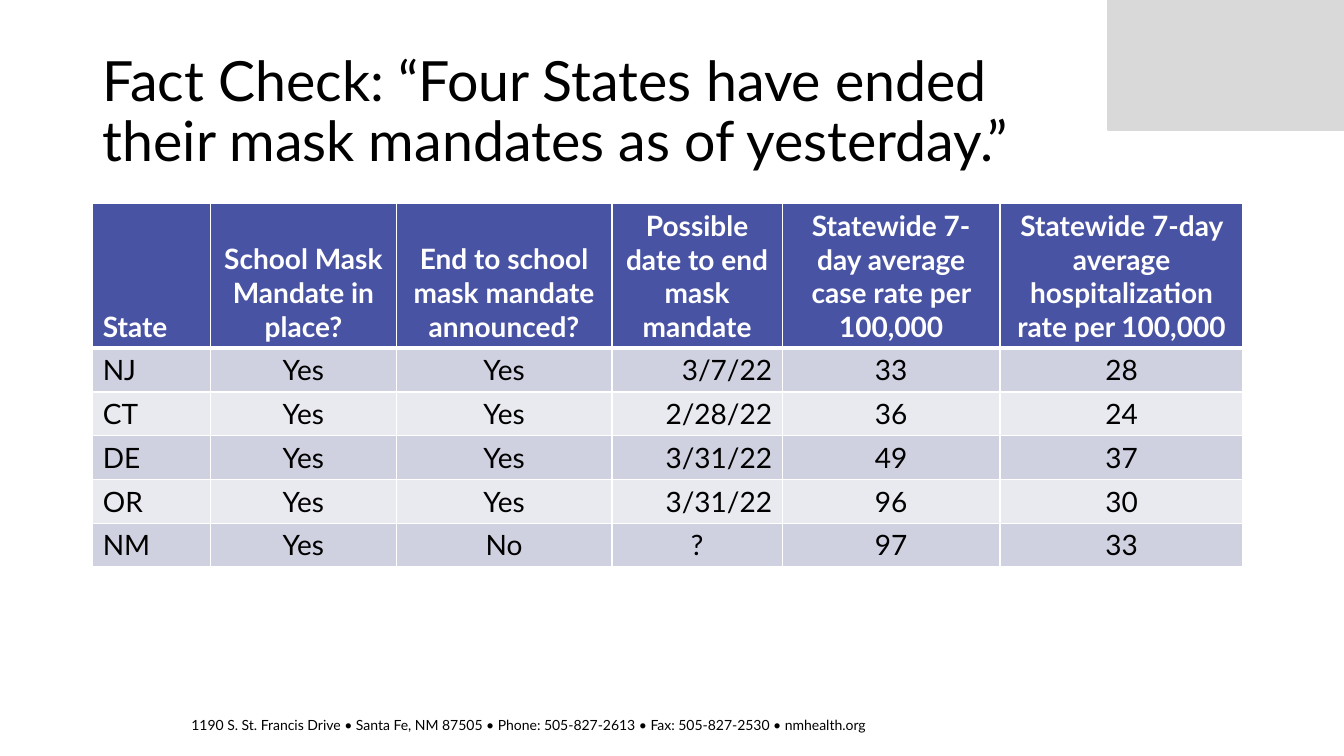
import dataclasses

import lxml.etree
import pptx
import pptx.dml.color
import pptx.enum.shapes
import pptx.enum.text
import pptx.oxml.ns
import pptx.util

ALIGN = pptx.enum.text.PP_ALIGN
ANCHOR = pptx.enum.text.MSO_ANCHOR
FIT = pptx.enum.text.MSO_AUTO_SIZE


@dataclasses.dataclass(frozen=True)
class Theme:
    font: str = "Lato"
    ink: str = "000000"
    white: str = "FFFFFF"
    gray: str = "D9D9D9"
    head: str = "4953A4"
    bands: tuple = ("D0D1E0", "E9E9F0")
    title: float = 39.6
    table: int = 20
    foot: int = 10
    thin: int = 1
    thick: int = 3


def px(count):
    """One px is a hundredth of an inch."""
    return pptx.util.Emu(count * 9144)


def rgb(code):
    return pptx.dml.color.RGBColor.from_string(code)


class Deck:
    def __init__(self, theme):
        self.theme = theme
        self.file = pptx.Presentation()
        self.file.slide_width, self.file.slide_height = px(1333), px(750)
        self.slide = self.file.slides.add_slide(self.file.slide_layouts[5])

    def label(self, par, text, size, color, bold=False, align=ALIGN.LEFT):
        par.alignment = align
        run = par.add_run()
        run.text = text
        run.font.name = self.theme.font
        run.font.size = pptx.util.Pt(size)
        run.font.bold = bold
        run.font.color.rgb = rgb(color)

    def block(self, *box):
        shape = self.slide.shapes.add_shape(
            pptx.enum.shapes.MSO_SHAPE.RECTANGLE, *map(px, box))
        shape.shadow.inherit = False
        shape.fill.solid()
        shape.fill.fore_color.rgb = rgb(self.theme.gray)
        shape.line.color.rgb = rgb(self.theme.gray)
        shape.line.width = pptx.util.Pt(self.theme.thin)

    def title(self, text, *box):
        shape = self.slide.shapes.title
        shape.left, shape.top, shape.width, shape.height = map(px, box)
        frame = shape.text_frame
        frame.auto_size = FIT.NONE
        frame.vertical_anchor = ANCHOR.MIDDLE
        par = frame.paragraphs[0]
        par.line_spacing = 0.9
        self.label(par, text, self.theme.title, self.theme.ink)

    def foot(self, text, *box):
        frame = self.slide.shapes.add_textbox(*map(px, box)).text_frame
        frame.word_wrap = True
        frame.auto_size = FIT.SHAPE_TO_FIT_TEXT
        self.label(frame.paragraphs[0], text, self.theme.foot, self.theme.ink)

    def edge(self, cell, side, width):
        props = cell._tc.get_or_add_tcPr()
        line = lxml.etree.SubElement(
            props, pptx.oxml.ns.qn("a:ln" + side), w=str(pptx.util.Pt(width)))
        fill = lxml.etree.SubElement(line, pptx.oxml.ns.qn("a:solidFill"))
        lxml.etree.SubElement(
            fill, pptx.oxml.ns.qn("a:srgbClr"), val=self.theme.white)

    def cell(self, cell, text, row, col):
        theme, head = self.theme, row == 0
        # Borders go ahead of the fill; a thick rule parts head and body
        thick = {"B": 0, "T": 1}
        for side in "LRTB":
            width = theme.thick if thick.get(side) == row else theme.thin
            self.edge(cell, side, width)
        cell.fill.solid()
        cell.fill.fore_color.rgb = rgb(
            theme.head if head else theme.bands[(row - 1) % 2])
        cell.vertical_anchor = ANCHOR.BOTTOM if head else ANCHOR.TOP
        if col == 0:
            align = ALIGN.LEFT
        elif "/" in text:
            align = ALIGN.RIGHT
        else:
            align = ALIGN.CENTER
        self.label(cell.text_frame.paragraphs[0], text, theme.table,
                   theme.white if head else theme.ink, head, align)

    def table(self, rows, left, top, cols, tall, low):
        heights = [tall] + [low] * (len(rows) - 1)
        grid = self.slide.shapes.add_table(
            len(rows), len(cols), px(left), px(top),
            px(sum(cols)), px(sum(heights))).table
        for col, width in zip(grid.columns, cols):
            col.width = px(width)
        for row, height in zip(grid.rows, heights):
            row.height = px(height)
        for r, row in enumerate(rows):
            for c, text in enumerate(row):
                self.cell(grid.cell(r, c), text, r, c)


STATES = [
    ("State", "School Mask Mandate in place?",
     "End to school mask mandate announced?",
     "Possible date to end mask mandate",
     "Statewide 7-day average case rate per 100,000",
     "Statewide 7-day average hospitalization rate per 100,000"),
    ("NJ", "Yes", "Yes", "3/7/22", "33", "28"),
    ("CT", "Yes", "Yes", "2/28/22", "36", "24"),
    ("DE", "Yes", "Yes", "3/31/22", "49", "37"),
    ("OR", "Yes", "Yes", "3/31/22", "96", "30"),
    ("NM", "Yes", "No", "?", "97", "33"),
]


def main():
    deck = Deck(Theme())
    # Corner block and address line
    deck.block(1099, -1, 234, 130)
    deck.foot("1190 S. St. Francis Drive • Santa Fe, NM 87505 • "
              "Phone: 505-827-2613 • Fax: 505-827-2530 • nmhealth.org",
              180, 706, 946, 27)
    # Title
    deck.title("Fact Check: “Four States have ended their mask mandates "
               "as of yesterday.”", 92, 40, 997, 145)
    # State table
    deck.table(STATES, 92, 202, (117, 184, 214, 169, 216, 241), 143, 43)
    deck.file.save("out.pptx")


if __name__ == "__main__":
    main()
